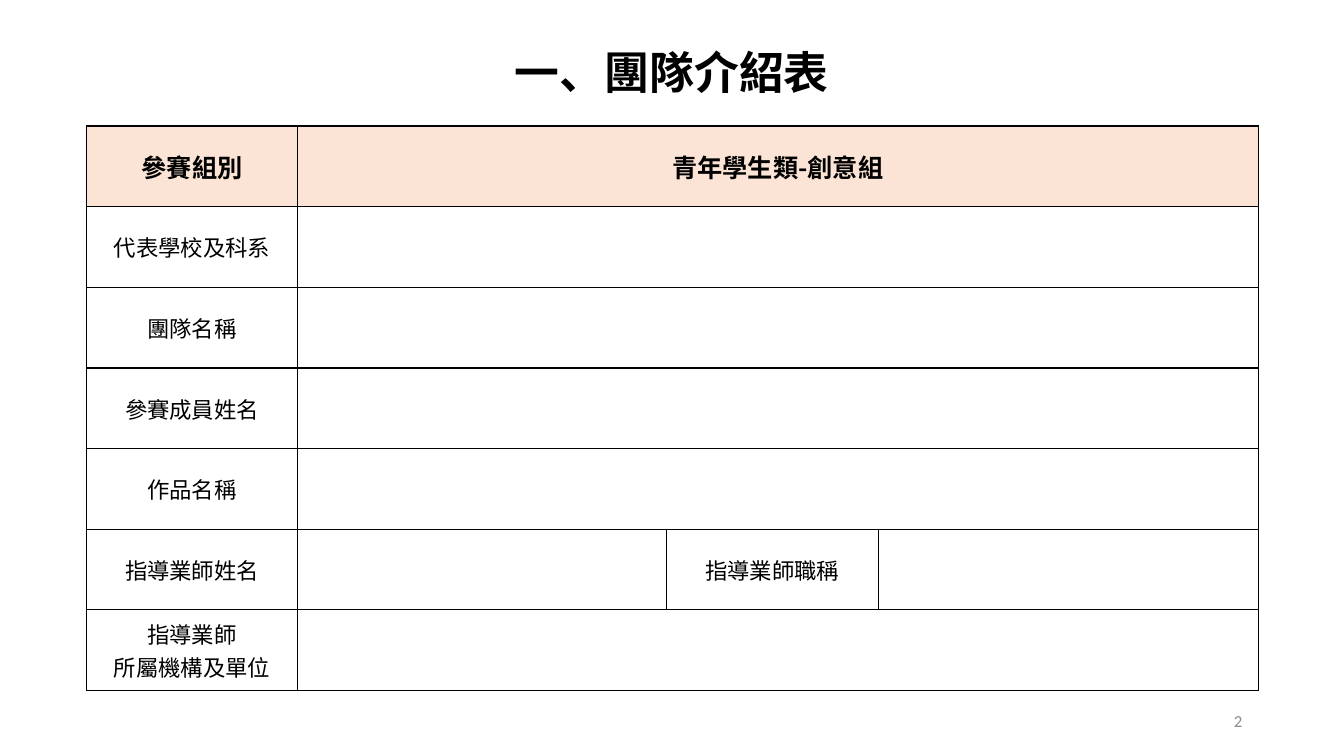
from dataclasses import dataclass

from lxml.etree import SubElement
from pptx import Presentation
from pptx.dml.color import RGBColor
from pptx.enum.text import MSO_ANCHOR, PP_ALIGN
from pptx.oxml import parse_xml
from pptx.oxml.ns import nsdecls, qn
from pptx.util import Inches, Pt


@dataclass(frozen=True)
class Theme:
    ink: str = "000000"
    muted: str = "8C8C8C"
    header_fill: str = "FBE4D5"
    cjk_font: str = "Noto Sans CJK SC"
    number_font: str = "Calibri"
    title_size: int = 32
    header_size: int = 18
    body_size: int = 16
    number_size: int = 12
    border_width: int = 1


THEME = Theme()
SLIDE_W, SLIDE_H = 13.33, 7.5

# Form layout: column widths in inches, one list of cell texts per row.
# A row of two texts spreads its second cell over the remaining columns.
COLUMNS = (2.09, 3.66, 2.1, 3.77)
ROW_HEIGHT = 0.8
FORM_ROWS = (
    ("參賽組別", "青年學生類-創意組"),
    ("代表學校及科系", ""),
    ("團隊名稱", ""),
    ("參賽成員姓名", ""),
    ("作品名稱", ""),
    ("指導業師姓名", "", "指導業師職稱", ""),
    ("指導業師\n所屬機構及單位", ""),
)


def write(frame, text, *, size, font=THEME.cjk_font, color=THEME.ink, bold=False,
          align=PP_ALIGN.CENTER, line_spacing=None):
    """Fill a text frame, one paragraph for each line of text."""
    for index, line in enumerate(text.split("\n")):
        paragraph = frame.add_paragraph() if index else frame.paragraphs[0]
        paragraph.alignment = align
        if line_spacing:
            paragraph.line_spacing = line_spacing
        run = paragraph.add_run()
        run.text = line
        run.font.size = Pt(size)
        run.font.bold = bold
        run.font.color.rgb = RGBColor.from_string(color)
        run.font.name = font
        SubElement(run.font._element, qn("a:ea")).set("typeface", font)


def add_text(slide, box, text, *, bottom_inset=0.05, **text_format):
    frame = slide.shapes.add_textbox(*map(Inches, box)).text_frame
    frame.word_wrap = True
    frame.vertical_anchor = MSO_ANCHOR.MIDDLE
    frame.margin_bottom = Inches(bottom_inset)
    write(frame, text, **text_format)


def add_borders(cell):
    properties = cell._tc.get_or_add_tcPr()
    for position, side in enumerate(("lnL", "lnR", "lnT", "lnB")):
        properties.insert(position, parse_xml(
            f'<a:{side} {nsdecls("a")} w="{Pt(THEME.border_width)}"><a:solidFill>'
            f'<a:srgbClr val="{THEME.ink}"/></a:solidFill></a:{side}>'))


def style_cell(cell, is_header):
    cell.vertical_anchor = MSO_ANCHOR.MIDDLE
    cell.margin_left = cell.margin_right = Inches(0.02)
    cell.margin_top = cell.margin_bottom = 0
    if is_header:
        cell.fill.solid()
        cell.fill.fore_color.rgb = RGBColor.from_string(THEME.header_fill)
    else:
        cell.fill.background()
    add_borders(cell)


def add_form(slide, left, top):
    size = (sum(COLUMNS), ROW_HEIGHT * len(FORM_ROWS))
    form = slide.shapes.add_table(len(FORM_ROWS), len(COLUMNS),
                                  *map(Inches, (left, top, *size))).table
    form.first_row = form.horz_banding = False
    for column, width in zip(form.columns, COLUMNS):
        column.width = Inches(width)
    for row_index, texts in enumerate(FORM_ROWS):
        is_header = row_index == 0
        form.rows[row_index].height = Inches(ROW_HEIGHT)
        for column_index in range(len(COLUMNS)):
            style_cell(form.cell(row_index, column_index), is_header)
        if len(texts) == 2:
            form.cell(row_index, 1).merge(form.cell(row_index, len(COLUMNS) - 1))
        for column_index, text in enumerate(texts):
            if text:
                write(form.cell(row_index, column_index).text_frame, text, bold=is_header,
                      size=THEME.header_size if is_header else THEME.body_size)


def add_title(slide, box):
    # The deep bottom inset lifts the heading clear of the form
    add_text(slide, box, "一、團隊介紹表", bottom_inset=0.53, size=THEME.title_size,
             bold=True, line_spacing=1.1)


def add_page_number(slide, box):
    add_text(slide, box, "2", size=THEME.number_size, font=THEME.number_font,
             color=THEME.muted, align=PP_ALIGN.RIGHT)


def main():
    deck = Presentation()
    deck.slide_width, deck.slide_height = Inches(SLIDE_W), Inches(SLIDE_H)
    slide = deck.slides.add_slide(deck.slide_layouts[6])
    add_title(slide, (0.45, 0, SLIDE_W - 0.9, 1.84))
    add_page_number(slide, (9.42, 6.95, 3, 0.4))
    add_form(slide, left=0.86, top=1.25)
    deck.save("out.pptx")


if __name__ == "__main__":
    main()
